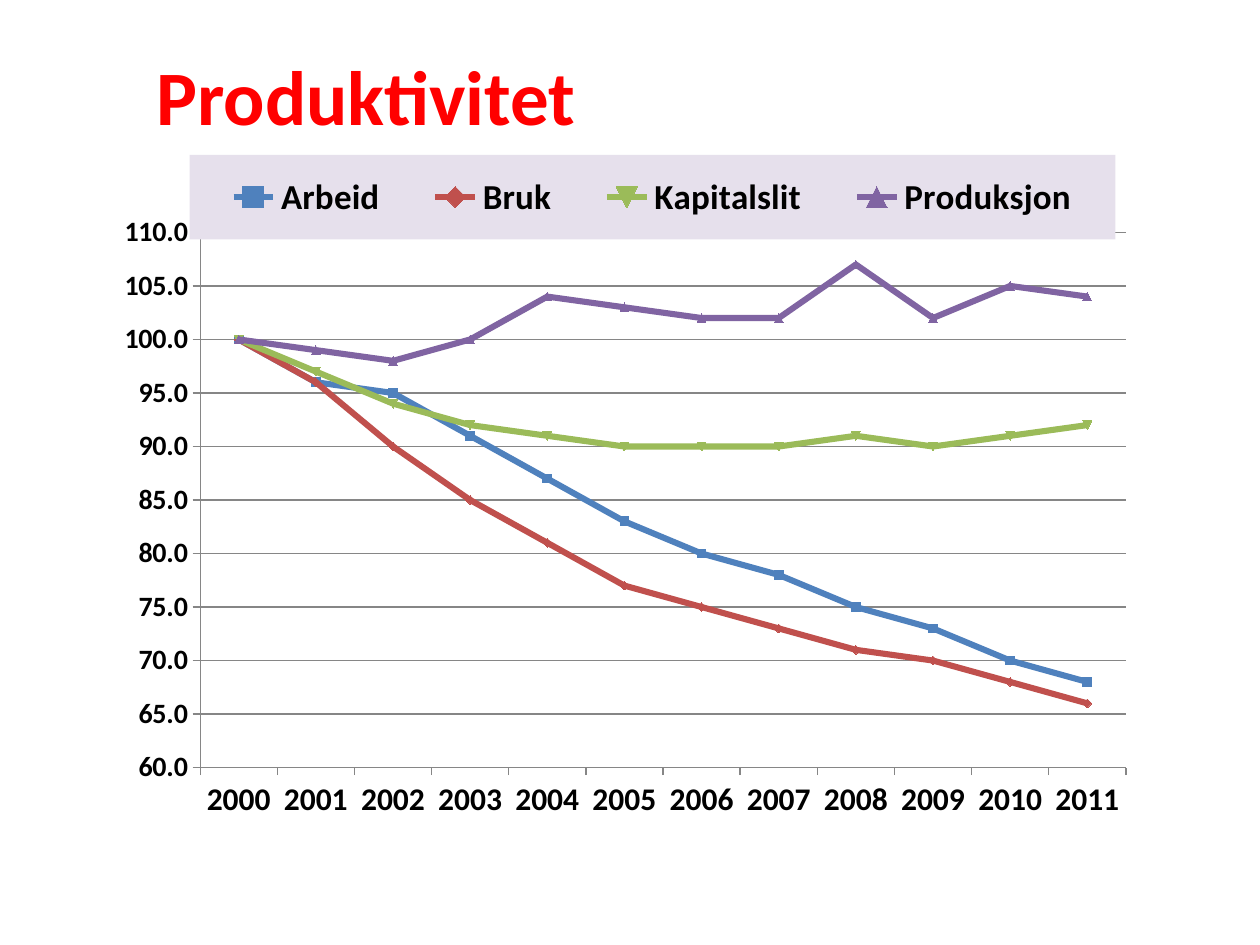
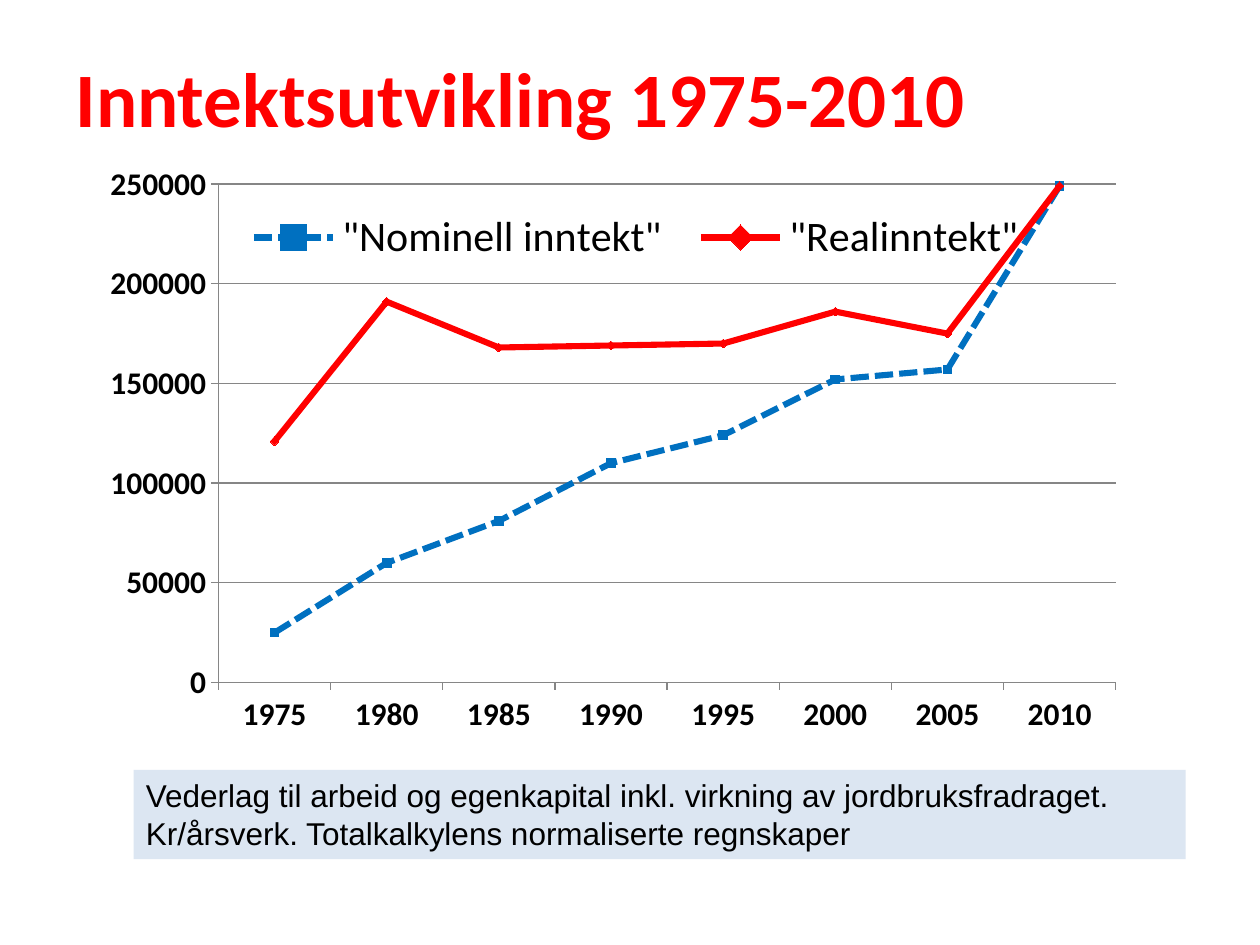
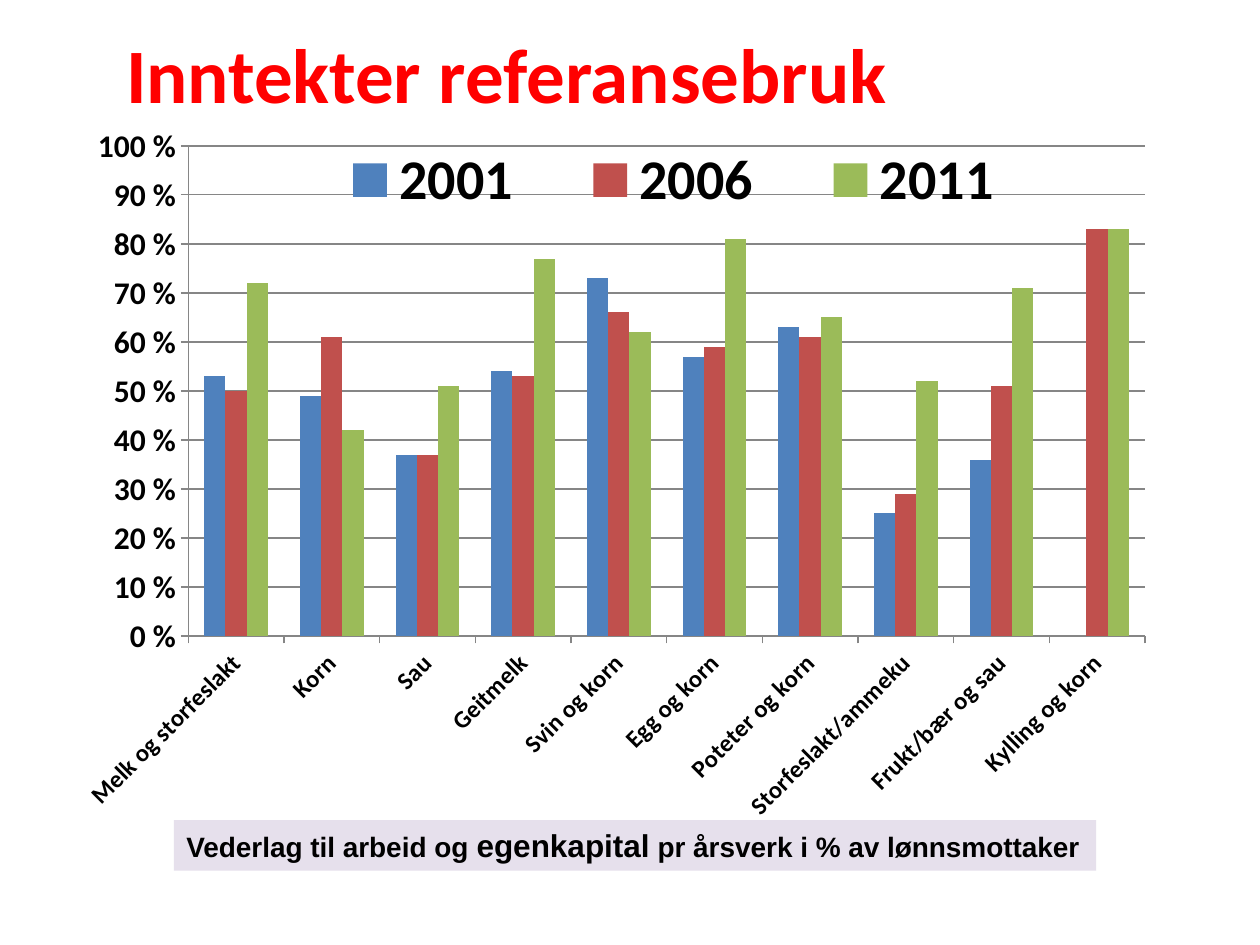
"""Build three chart slides on productivity and income in farming."""
from lxml.etree import SubElement
from pptx import Presentation
from pptx.chart.data import CategoryChartData
from pptx.dml.color import RGBColor
from pptx.enum.chart import XL_CHART_TYPE, XL_LEGEND_POSITION, XL_TICK_MARK
from pptx.enum.dml import MSO_LINE
from pptx.enum.text import MSO_ANCHOR, MSO_AUTO_SIZE, PP_ALIGN
from pptx.oxml import parse_xml
from pptx.oxml.ns import nsdecls, qn
from pptx.util import Inches, Pt

HEADING_FONT, CAPTION_FONT = "Calibri", "Arial"
RED, BLACK, WHITE, GRID = "FF0000", "000000", "FFFFFF", "868686"
LILAC, PALE_BLUE = "E6E0EC", "DCE6F2"
BLUE, BRICK, GREEN, PURPLE = "4F81BD", "C0504D", "9BBB59", "8064A2"
TITLE_ONLY = 5

SLIDES = [
    {
        "title": "Produktivitet",
        "title_box": (1.14, 0.28, 8.36, 0.95),
        "chart_box": (0.67, 1.23, 8.35, 5.59),
        "type": XL_CHART_TYPE.LINE_MARKERS,
        "categories": [str(year) for year in range(2000, 2012)],
        "series": [
            ("Arbeid", BLUE, [100, 96, 95, 91, 87, 83, 80, 78, 75, 73, 70, 68]),
            ("Bruk", BRICK, [100, 96, 90, 85, 81, 77, 75, 73, 71, 70, 68, 66]),
            ("Kapitalslit", GREEN, [100, 97, 94, 92, 91, 90, 90, 90, 91, 90, 91, 92]),
            ("Produksjon", PURPLE, [100, 99, 98, 100, 104, 103, 102, 102, 107, 102, 105, 104]),
        ],
        "scale": (60, 110, 5),
        "format": "0.0",
        "sizes": (18, 16),
        "plot": (0.11, 0.11, 0.88, 0.76),
        "legend": {"box": (0.1, 0, 0.88, 0.12), "size": 20, "bold": True, "fill": LILAC},
    },
    {
        "title": "Inntektsutvikling 1975-2010",
        "title_box": (0.5, 0.3, 9, 0.93),
        "chart_box": (0.67, 1.31, 8.19, 4.72),
        "type": XL_CHART_TYPE.LINE_MARKERS,
        "categories": [str(year) for year in range(1975, 2011, 5)],
        "series": [
            ('"Nominell inntekt"', "0070C0",
             [25000, 60000, 81000, 110000, 124000, 152000, 157000, 249000]),
            ('"Realinntekt"', RED,
             [121000, 191000, 168000, 169000, 170000, 186000, 175000, 249000]),
        ],
        "dashed": ['"Nominell inntekt"'],
        "scale": (0, 250000, 50000),
        "format": "0",
        "sizes": (18, 18),
        "plot": (0.13, 0.03, 0.87, 0.84),
        "legend": {"box": (0.14, 0.06, 0.79, 0.12), "size": 24, "bold": False},
        "caption": {
            "box": (1.06, 6.11, 8.35, 0.71), "fill": PALE_BLUE, "bold": False,
            "runs": [("Vederlag til arbeid og egenkapital inkl. virkning av jordbruksfradraget. "
                      "Kr/årsverk. Totalkalkylens normaliserte regnskaper", 18)],
        },
    },
    {
        "title": "Inntekter referansebruk",
        "title_box": (0.9, 0, 7.32, 1.15),
        "title_fill": WHITE,
        "chart_box": (0.67, 0.92, 8.66, 5.67),
        "type": XL_CHART_TYPE.COLUMN_CLUSTERED,
        "categories": ["Melk og storfeslakt", "Korn", "Sau", "Geitmelk", "Svin og korn",
                       "Egg og korn", "Poteter og korn", "Storfeslakt/ammeku",
                       "Frukt/bær og sau", "Kylling og korn"],
        "series": [
            ("2001", BLUE, [0.53, 0.49, 0.37, 0.54, 0.73, 0.57, 0.63, 0.25, 0.36, None]),
            ("2006", BRICK, [0.5, 0.61, 0.37, 0.53, 0.66, 0.59, 0.61, 0.29, 0.51, 0.83]),
            ("2011", GREEN, [0.72, 0.42, 0.51, 0.77, 0.62, 0.81, 0.65, 0.52, 0.71, 0.83]),
        ],
        "scale": (0, 1, 0.1),
        "format": "0\\ %",
        "sizes": (14, 18),
        "label_angle": -45,
        "plot": (0.095, 0.042, 0.877, 0.686),
        "legend": {"box": (0.19, 0.03, 0.7, 0.12), "size": 32, "bold": True},
        "caption": {
            "box": (1.38, 6.51, 7.32, 0.4), "fill": LILAC, "bold": True,
            "runs": [("Vederlag til arbeid og ", 16), ("egenkapital", 18),
                     (" pr årsverk i % av lønnsmottaker", 16)],
        },
    },
]


def color(value):
    return RGBColor.from_string(value)


def paint(shape, value):
    shape.fill.solid()
    shape.fill.fore_color.rgb = color(value)


def style_font(font, size, bold, value=BLACK, name=HEADING_FONT):
    font.name, font.size, font.bold = name, Pt(size), bold
    font.color.rgb = color(value)


def add_title(slide, content):
    title = slide.shapes.title
    title.left, title.top, title.width, title.height = map(Inches, content["title_box"])
    if "title_fill" in content:
        paint(title, content["title_fill"])
    title.text_frame.text = content["title"]
    title.text_frame.vertical_anchor = MSO_ANCHOR.MIDDLE
    paragraph = title.text_frame.paragraphs[0]
    paragraph.alignment = PP_ALIGN.LEFT
    style_font(paragraph.font, 44, True, RED)


def add_caption(slide, caption):
    box = slide.shapes.add_textbox(*map(Inches, caption["box"]))
    paint(box, caption["fill"])
    box.text_frame.word_wrap = True
    box.text_frame.auto_size = MSO_AUTO_SIZE.SHAPE_TO_FIT_TEXT
    paragraph = box.text_frame.paragraphs[0]
    for text, size in caption["runs"]:
        run = paragraph.add_run()
        run.text = text
        style_font(run.font, size, caption["bold"], name=CAPTION_FONT)


def manual_layout(box, inner=False):
    layout = parse_xml(f"<c:layout {nsdecls('c')}><c:manualLayout/></c:layout>")
    target = [("layoutTarget", "inner")] if inner else []
    modes = [("xMode", "edge"), ("yMode", "edge")]
    for tag, value in target + modes + list(zip("xywh", box)):
        SubElement(layout[0], qn(f"c:{tag}")).set("val", str(value))
    return layout


def style_axes(chart, content):
    axes = (chart.category_axis, chart.value_axis)
    for axis, size in zip(axes, content["sizes"]):
        style_font(axis.tick_labels.font, size, True)
        axis.major_tick_mark = XL_TICK_MARK.OUTSIDE
        axis.minor_tick_mark = XL_TICK_MARK.NONE
    value_axis = chart.value_axis
    value_axis.minimum_scale, value_axis.maximum_scale, value_axis.major_unit = content["scale"]
    value_axis.tick_labels.number_format = content["format"]
    value_axis.tick_labels.number_format_is_linked = False
    value_axis.has_major_gridlines = True
    for line in (axes[0].format.line, axes[1].format.line, value_axis.major_gridlines.format.line):
        line.color.rgb, line.width = color(GRID), Pt(0.75)
    if "label_angle" in content:
        body = chart.element.xpath(".//c:catAx/c:txPr/a:bodyPr")[0]
        body.set("rot", str(content["label_angle"] * 60000))


def style_series(chart, content):
    plot = chart.plots[0]
    plot.vary_by_categories = False
    is_line = content["type"] == XL_CHART_TYPE.LINE_MARKERS
    if not is_line:
        plot.gap_width, plot.overlap = 150, 0
    for series, (name, value, _) in zip(plot.series, content["series"]):
        if is_line:
            series.smooth = False
            series.marker.size = 5
            line = series.format.line
            line.color.rgb, line.width = color(value), Pt(3.5)
            if name in content.get("dashed", []):
                line.dash_style = MSO_LINE.SQUARE_DOT
        else:
            paint(series.format, value)


def style_legend(chart, legend):
    chart.has_legend = True
    chart.legend.position = XL_LEGEND_POSITION.RIGHT
    chart.legend.include_in_layout = False
    style_font(chart.legend.font, legend["size"], legend["bold"])
    element = chart.element.xpath("c:chart/c:legend")[0]
    for layout in element.findall(qn("c:layout")):
        element.remove(layout)
    element.find(qn("c:legendPos")).addnext(manual_layout(legend["box"]))
    if "fill" in legend:
        element.find(qn("c:overlay")).addnext(parse_xml(
            f"<c:spPr {nsdecls('c', 'a')}><a:solidFill>"
            f"<a:srgbClr val=\"{legend['fill']}\"/></a:solidFill></c:spPr>"))


def add_chart(slide, content):
    data = CategoryChartData(number_format=content["format"])
    data.categories = content["categories"]
    for name, _, values in content["series"]:
        data.add_series(name, values)
    box = map(Inches, content["chart_box"])
    chart = slide.shapes.add_chart(content["type"], *box, data).chart
    chart.has_title = False
    style_font(chart.font, 10, False)
    style_axes(chart, content)
    style_series(chart, content)
    style_legend(chart, content["legend"])
    plot_area = chart.element.xpath("c:chart/c:plotArea")[0]
    for layout in plot_area.findall(qn("c:layout")):
        plot_area.remove(layout)
    plot_area.insert(0, manual_layout(content["plot"], inner=True))


def main():
    presentation = Presentation()
    presentation.slide_width, presentation.slide_height = Inches(10), Inches(7.5)
    for content in SLIDES:
        slide = presentation.slides.add_slide(presentation.slide_layouts[TITLE_ONLY])
        add_title(slide, content)
        if "caption" in content:
            add_caption(slide, content["caption"])
        add_chart(slide, content)
    presentation.save("out.pptx")


if __name__ == "__main__":
    main()
